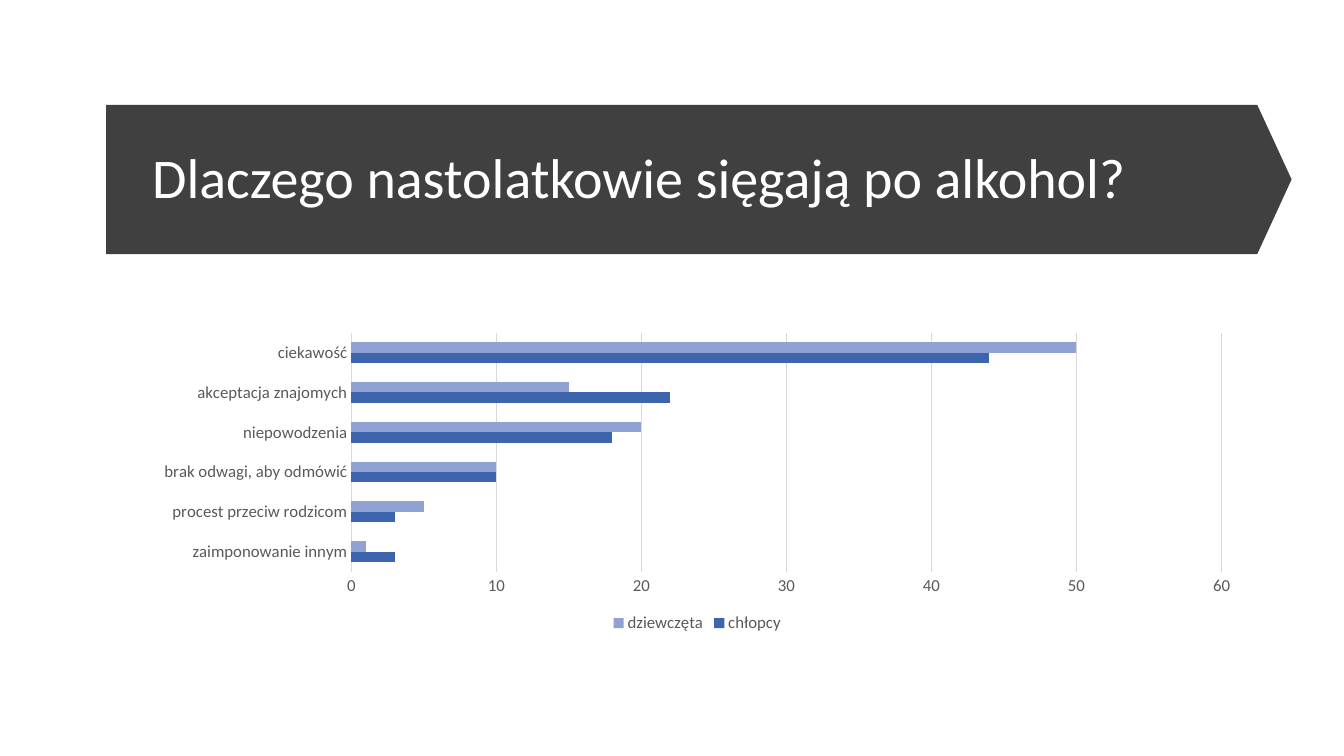
from pptx import Presentation
from pptx.chart.data import CategoryChartData
from pptx.dml.color import RGBColor
from pptx.enum.chart import XL_CHART_TYPE as ChartType
from pptx.enum.chart import XL_LEGEND_POSITION as LegendPosition
from pptx.enum.chart import XL_TICK_MARK as TickMark
from pptx.enum.shapes import MSO_SHAPE as Shape
from pptx.enum.text import MSO_ANCHOR as Anchor
from pptx.util import Inches, Pt

WIDTH, HEIGHT = 13.33, 7.5
FONT = "Calibri"
WHITE = RGBColor(0xFF, 0xFF, 0xFF)
CHARCOAL = RGBColor(0x40, 0x40, 0x40)
LABEL_GREY = RGBColor(0x59, 0x59, 0x59)
LINE_GREY = RGBColor(0xD9, 0xD9, 0xD9)
DARK_BLUE = RGBColor(0x3C, 0x65, 0xAE)
LIGHT_BLUE = RGBColor(0x90, 0xA2, 0xD3)

TITLE = "Dlaczego nastolatkowie sięgają po alkohol?"
REASONS = [
    "zaimponowanie innym",
    "procest przeciw rodzicom",
    "brak odwagi, aby odmówić",
    "niepowodzenia",
    "akceptacja znajomych",
    "ciekawość",
]
ANSWERS = [
    ("chłopcy", [3, 3, 10, 18, 22, 44], DARK_BLUE),
    ("dziewczęta", [1, 5, 10, 20, 15, 50], LIGHT_BLUE),
]

# Left, top, width and height, each in percent of the slide's size
BANNER_AREA = (7.9, 13.87, 88.2, 19.73)
TITLE_AREA = (10.58, 17.6, 82.2, 12.53)
CHART_AREA = (10.58, 43.2, 82.6, 41.07)


def place(area):
    """Turn percentages of the slide into lengths."""
    return [Inches(share * side / 100)
            for share, side in zip(area, (WIDTH, HEIGHT) * 2)]


def style_font(font, size, color):
    font.name = FONT
    font.size = Pt(size)
    font.color.rgb = color


def add_banner(page, area):
    banner = page.shapes.add_shape(Shape.PENTAGON, *place(area))
    banner.adjustments[0] = 0.23
    banner.shadow.inherit = False
    banner.fill.solid()
    banner.fill.fore_color.rgb = CHARCOAL
    banner.line.fill.background()


def add_title(page, area, text):
    frame = page.shapes.add_textbox(*place(area)).text_frame
    frame.word_wrap = True
    frame.vertical_anchor = Anchor.MIDDLE
    frame.text = text
    para = frame.paragraphs[0]
    para.line_spacing = 0.9
    style_font(para.runs[0].font, 40, WHITE)


def style_line(line):
    line.color.rgb = LINE_GREY
    line.width = Pt(0.75)


def style_axis(axis):
    axis.major_tick_mark = TickMark.NONE
    axis.minor_tick_mark = TickMark.NONE
    style_font(axis.tick_labels.font, 12, LABEL_GREY)


def add_bar_chart(page, area, categories, answers):
    data = CategoryChartData()
    data.categories = categories
    for name, values, _ in answers:
        data.add_series(name, values)
    chart = page.shapes.add_chart(
        ChartType.BAR_CLUSTERED, *place(area), data).chart
    chart.has_title = False
    style_font(chart.font, 12, LABEL_GREY)

    # Bars
    plot = chart.plots[0]
    plot.gap_width = 182
    plot.vary_by_categories = False
    for series, (_, _, color) in zip(plot.series, answers):
        series.format.fill.solid()
        series.format.fill.fore_color.rgb = color

    # Axes
    style_axis(chart.category_axis)
    style_line(chart.category_axis.format.line)
    scale = chart.value_axis
    style_axis(scale)
    scale.minimum_scale, scale.maximum_scale, scale.major_unit = 0, 60, 10
    scale.format.line.fill.background()
    style_line(scale.major_gridlines.format.line)

    # Legend
    chart.has_legend = True
    chart.legend.position = LegendPosition.BOTTOM
    chart.legend.include_in_layout = False
    style_font(chart.legend.font, 12, LABEL_GREY)


def main():
    deck = Presentation()
    deck.slide_width, deck.slide_height = Inches(WIDTH), Inches(HEIGHT)
    page = deck.slides.add_slide(deck.slide_layouts[6])
    add_banner(page, BANNER_AREA)
    add_title(page, TITLE_AREA, TITLE)
    add_bar_chart(page, CHART_AREA, REASONS, ANSWERS)
    deck.save("out.pptx")


if __name__ == "__main__":
    main()
